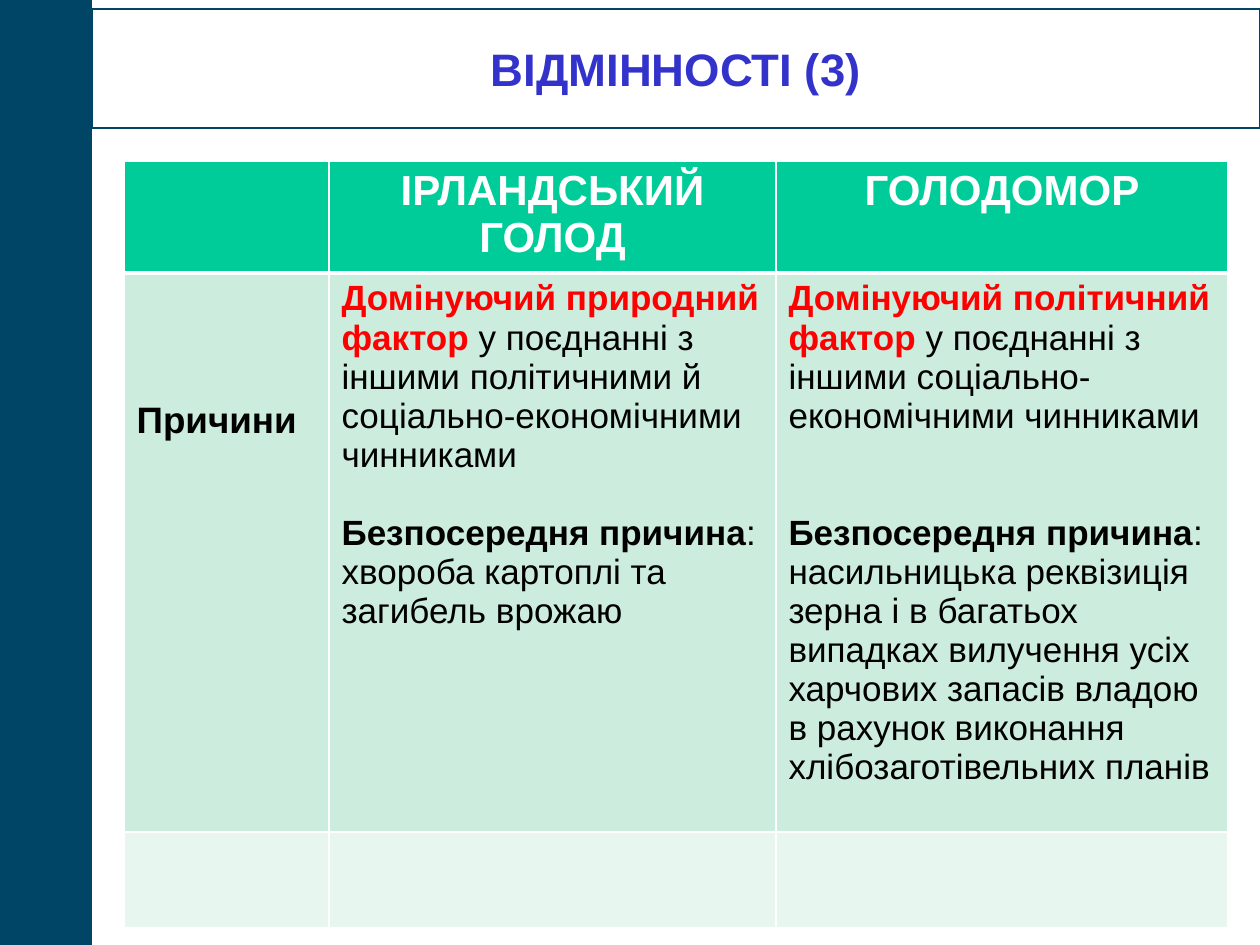
"""Build a slide comparing the causes of two famines in a table."""
from dataclasses import dataclass

from lxml.etree import SubElement
from pptx import Presentation
from pptx.dml.color import RGBColor
from pptx.enum.shapes import MSO_SHAPE as Shape
from pptx.enum.text import MSO_ANCHOR as Anchor, MSO_AUTO_SIZE as Fit, PP_ALIGN as Align
from pptx.oxml.ns import qn
from pptx.util import Emu, Pt

HUES = {
    "navy": "004466", "white": "FFFFFF", "blue": "3333CC", "red": "FF0000",
    "black": "000000", "green": "00CC99", "mint": "CCECDE", "pale": "E7F6EF",
}
SCALE = 914400 / 126
COLS = (205, 447, 452)
ROWS = (112, 559, 96)
FILLS = ("green", "mint", "pale")
EDGES = ((1, 3), (3, 1), (1, 1))


@dataclass
class Cause:
    """One famine: its main factor, other factors and direct cause."""
    name: str
    factor: str
    others: str
    gap: int
    direct: str


CAUSES = (
    Cause("ІРЛАНДСЬКИЙ ГОЛОД", "Домінуючий природний фактор",
          " у поєднанні з іншими політичними й соціально-економічними чинниками",
          39, "хвороба картоплі та загибель врожаю"),
    Cause("ГОЛОДОМОР", "Домінуючий політичний фактор",
          " у поєднанні з іншими соціально-економічними чинниками",
          78, "насильницька реквізиція зерна і в багатьох випадках вилучення усіх "
          "харчових запасів владою в рахунок виконання хлібозаготівельних планів"),
)


def px(num: int) -> Emu:
    """Turn pixels into EMU."""
    return Emu(round(num * SCALE))


def rgb(hue: str) -> RGBColor:
    """Look up a colour by name."""
    return RGBColor.from_string(HUES[hue])


def paint(item, hue: str) -> None:
    """Give a shape or cell a solid fill."""
    item.fill.solid()
    item.fill.fore_color.rgb = rgb(hue)


def write(para, text: str, size: int = 20, hue: str = "black",
          bold: bool = False, align=Align.LEFT, gap: int = 0) -> None:
    """Add a formatted run to a paragraph."""
    para.alignment = align
    if gap:
        para.space_before = px(gap)
    run = para.add_run()
    run.text = text
    font = run.font
    font.name, font.size, font.bold = "Arial", Pt(size), bold
    font.color.rgb = rgb(hue)


def edge(cell, top: int, base: int) -> None:
    """Draw the white borders of a cell."""
    props = cell._tc.get_or_add_tcPr()
    for side, width in (("L", 1), ("R", 1), ("T", top), ("B", base)):
        line = SubElement(props, qn(f"a:ln{side}"), w=str(Pt(width)))
        fill = SubElement(line, qn("a:solidFill"))
        SubElement(fill, qn("a:srgbClr"), val=HUES["white"])


def draw_bar(slide) -> None:
    """Draw the dark band on the left."""
    bar = slide.shapes.add_shape(Shape.RECTANGLE, 0, 0, px(92), px(945))
    bar.shadow.inherit = False
    paint(bar, "navy")
    bar.line.fill.background()


def draw_title(slide, text: str) -> None:
    """Place and format the title."""
    title = slide.shapes.title
    title.left, title.top, title.width, title.height = map(px, (92, 9, 1168, 119))
    paint(title, "white")
    title.line.color.rgb = rgb("navy")
    title.line.width = Pt(0.75)
    frame = title.text_frame
    frame.auto_size, frame.word_wrap = Fit.NONE, False
    frame.vertical_anchor = Anchor.MIDDLE
    write(frame.paragraphs[0], text, size=26, hue="blue", bold=True, align=Align.CENTER)


def fill_cause(table, col: int, cause: Cause) -> None:
    """Write one famine into its column."""
    head = table.cell(0, col).text_frame.paragraphs[0]
    write(head, cause.name, size=24, hue="white", bold=True, align=Align.CENTER)
    frame = table.cell(1, col).text_frame
    first = frame.paragraphs[0]
    write(first, cause.factor, hue="red", bold=True)
    write(first, cause.others)
    label = frame.add_paragraph()
    write(label, "Безпосередня причина", bold=True, gap=cause.gap)
    write(label, ":")
    write(frame.add_paragraph(), cause.direct)


def draw_table(slide) -> None:
    """Draw the table of causes."""
    table = slide.shapes.add_table(len(ROWS), len(COLS), px(124), px(161),
                                   px(sum(COLS)), px(sum(ROWS))).table
    for col, width in zip(table.columns, COLS):
        col.width = px(width)
    for row, height, hue, edges in zip(table.rows, ROWS, FILLS, EDGES):
        row.height = px(height)
        for cell in row.cells:
            edge(cell, *edges)
            paint(cell, hue)
    side = table.cell(1, 0)
    side.margin_top = px(127)
    write(side.text_frame.paragraphs[0], "Причини", size=21, bold=True)
    for col, cause in enumerate(CAUSES, 1):
        fill_cause(table, col, cause)


def main() -> None:
    """Build and save the deck."""
    deck = Presentation()
    deck.slide_width, deck.slide_height = px(1260), px(945)
    slide = deck.slides.add_slide(deck.slide_layouts[5])
    draw_bar(slide)
    draw_title(slide, "ВІДМІННОСТІ (3)")
    draw_table(slide)
    deck.save("out.pptx")


if __name__ == "__main__":
    main()
